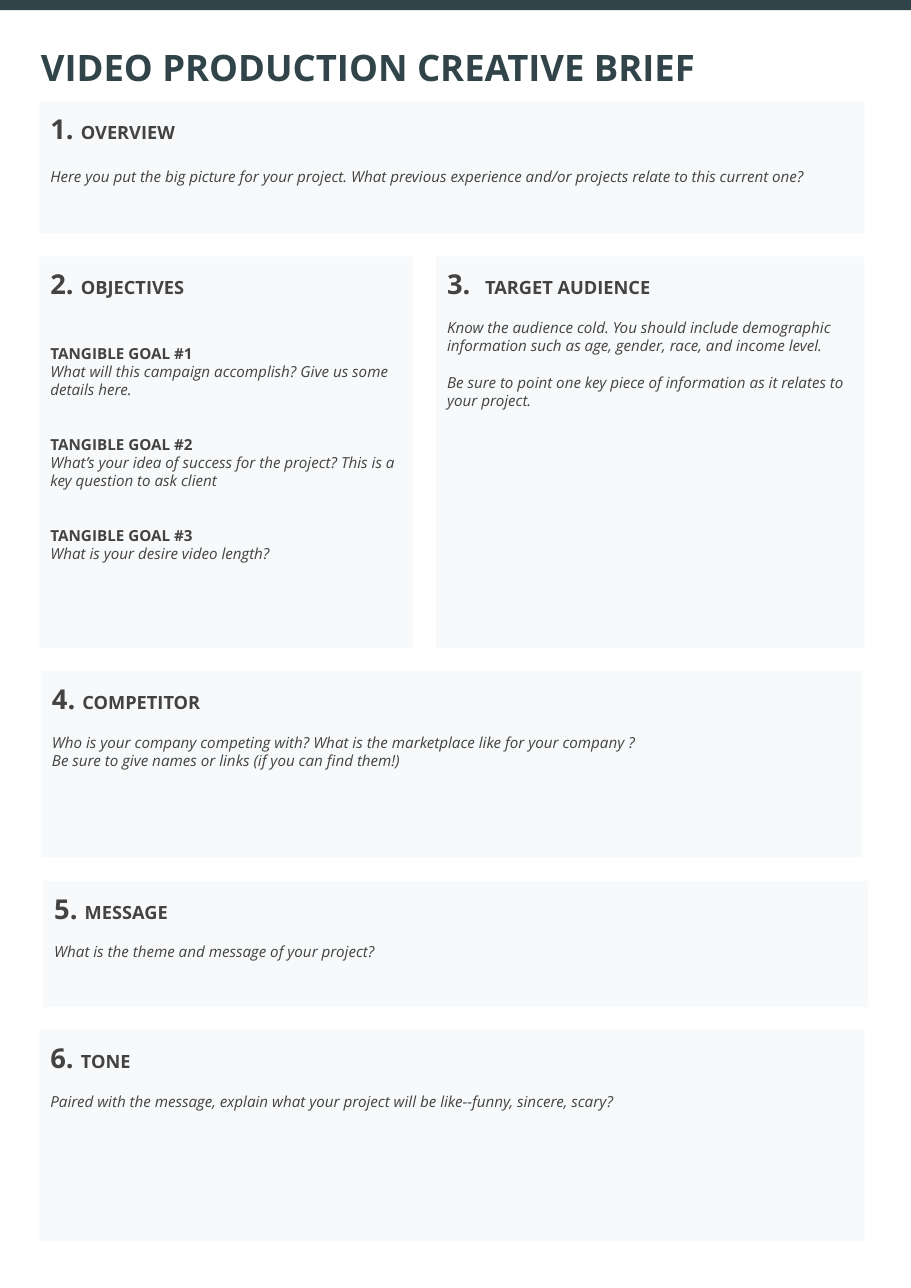
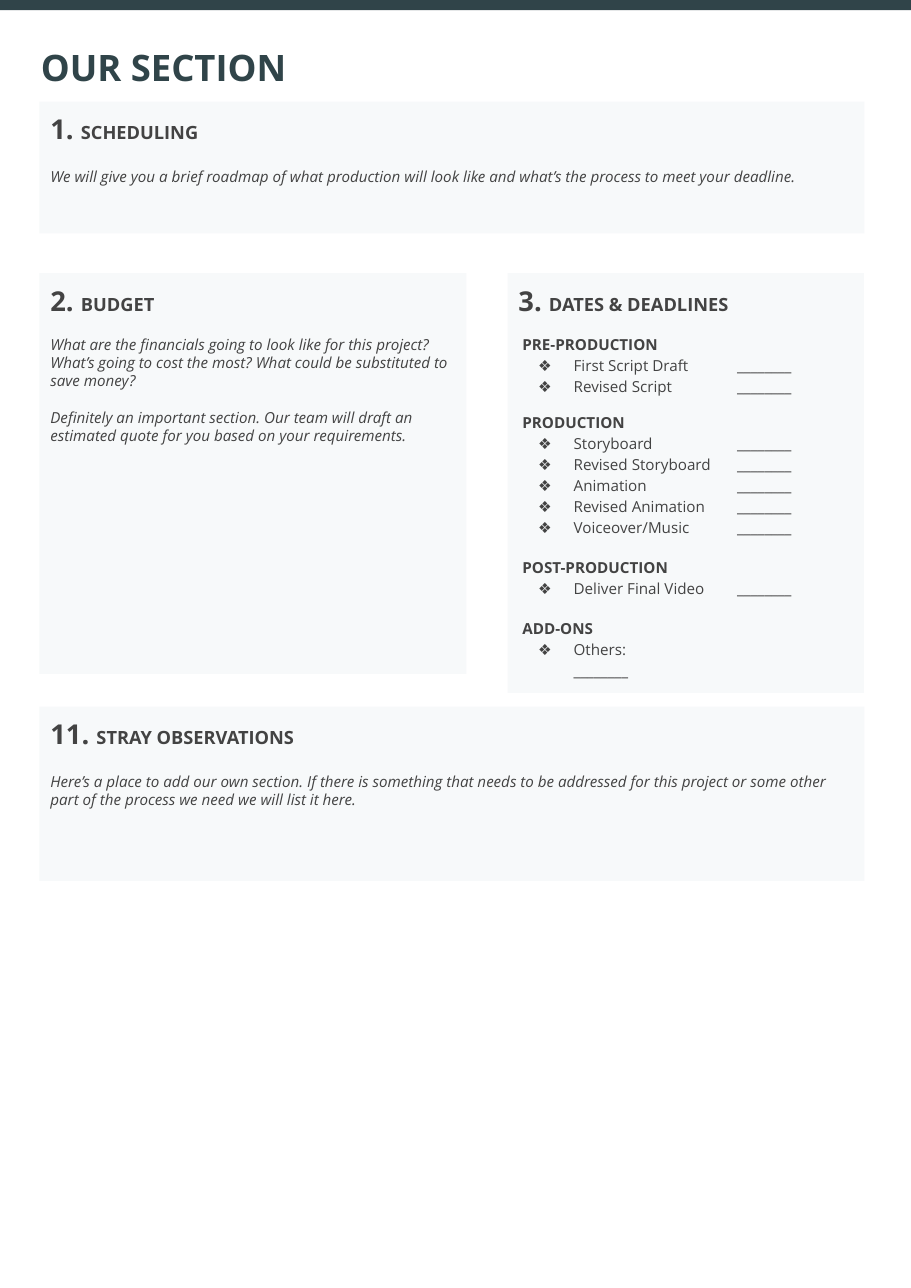
from lxml.etree import SubElement
from pptx import Presentation
from pptx.dml.color import RGBColor
from pptx.enum.shapes import MSO_SHAPE
from pptx.enum.text import MSO_ANCHOR as Anchor, PP_ALIGN as Align
from pptx.oxml.ns import qn
from pptx.util import Pt

COLORS = {"dark": "304449", "panel": "F7F9FA", "text": "434343"}
FONT = "Open Sans"
PAGE_W, PAGE_H = 1200, 1697
INSET = 14.4
LEFT, FULL_W = 52, 1086.5
LINE = 24        # height of one body line
WIDE_LINE = 28.8  # height of one heading line
BLANK = "________"


def write(paragraph, text, size=20, color="text", bold=False, italic=False):
    """Add formatted text; a newline becomes a line break."""
    for index, line in enumerate(text.split("\n")):
        if index:
            paragraph.add_line_break()
        run = paragraph.add_run()
        run.text = line
        font = run.font
        font.name, font.size = FONT, Pt(size)
        font.bold, font.italic = bold, italic
        font.color.rgb = RGBColor.from_string(COLORS[color])


class Brief:
    """Style of the brief and the slide being filled."""

    def __init__(self):
        self.deck = Presentation()
        self.deck.slide_width, self.deck.slide_height = Pt(PAGE_W), Pt(PAGE_H)
        self.slide = None

    def page(self, title):
        self.slide = self.deck.slides.add_slide(self.deck.slide_layouts[6])
        self.block(0, 0, PAGE_W, 13.5, "dark")
        box = self.slide.shapes.add_textbox(Pt(39.5), Pt(44.5), Pt(1110), Pt(78.5))
        write(self.prepare(box), title, size=48, color="dark", bold=True)

    def block(self, left, top, width, height, color):
        shape = self.slide.shapes.add_shape(
            MSO_SHAPE.RECTANGLE, Pt(left), Pt(top), Pt(width), Pt(height))
        shape.shadow.inherit = False
        shape.fill.solid()
        shape.fill.fore_color.rgb = RGBColor.from_string(COLORS[color])
        shape.line.fill.background()
        return shape

    def prepare(self, shape):
        frame = shape.text_frame
        frame.word_wrap = True
        frame.vertical_anchor = Anchor.TOP
        frame.margin_left = frame.margin_right = Pt(INSET)
        frame.margin_top = frame.margin_bottom = Pt(INSET)
        frame.paragraphs[0].alignment = Align.LEFT
        return frame.paragraphs[0]

    def panel(self, number, heading, top, height, left=LEFT, width=FULL_W, tab=None):
        """Draw a numbered panel and return its text frame."""
        shape = self.block(left, top, width, height, "panel")
        title = self.prepare(shape)
        if tab:
            stops = SubElement(title._p.get_or_add_pPr(), qn("a:tabLst"))
            SubElement(stops, qn("a:tab"), pos=str(Pt(tab)), algn="l")
        write(title, f"{number}." + ("\t" if tab else " "), size=36, bold=True)
        write(title, heading, size=24, bold=True)
        return shape.text_frame

    def line(self, frame, text, gap=0, indent=0, **style):
        paragraph = frame.add_paragraph()
        paragraph.alignment = Align.LEFT
        paragraph.space_before = Pt(gap)
        if indent:
            paragraph._p.get_or_add_pPr().set("marL", str(Pt(indent)))
        write(paragraph, text, **style)
        return paragraph

    def hint(self, frame, text, gap=0):
        self.line(frame, text, gap, italic=True)

    def bullet(self, frame, text):
        paragraph = self.line(frame, text, indent=72.7)
        paragraph.line_spacing = 1.15
        props = paragraph._p.get_or_add_pPr()
        props.set("indent", str(Pt(-46.8)))
        color = SubElement(props, qn("a:buClr"))
        SubElement(color, qn("a:srgbClr"), val=COLORS["text"])
        SubElement(props, qn("a:buFont"), typeface=FONT)
        SubElement(props, qn("a:buChar"), char="❖")


def creative_brief(brief):
    brief.page("VIDEO PRODUCTION CREATIVE BRIEF")

    # Overview
    overview = brief.panel(1, "OVERVIEW", 134, 173.5)
    brief.hint(overview, "Here you put the big picture for your project. What previous "
               "experience and/or projects relate to this current one?", WIDE_LINE)

    # Objectives
    objectives = brief.panel(2, "OBJECTIVES", 338, 516, width=492)
    goals = [
        "What will this campaign accomplish? Give us some details here.",
        "What’s your idea of success for the project? This is a key question to ask client",
        "What is your desire video length?",
    ]
    for number, goal in enumerate(goals, 1):
        gap = 2 * (WIDE_LINE if number == 1 else LINE)
        brief.line(objectives, f"TANGIBLE GOAL #{number}", gap, bold=True)
        brief.hint(objectives, goal)

    # Target audience
    audience = brief.panel(3, "TARGET AUDIENCE", 338, 516, 574.5, 564, tab=50)
    for advice in (
        "Know the audience cold. You should include demographic information such as "
        "age, gender, race, and income level.",
        "Be sure to point one key piece of information as it relates to your project.",
    ):
        brief.hint(audience, advice, LINE)

    # Competitor, message and tone
    competitor = brief.panel(4, "COMPETITOR", 884, 245.5, 54, 1081.5)
    brief.hint(competitor, "Who is your company competing with? What is the marketplace "
               "like for your company ?", LINE)
    brief.hint(competitor, "Be sure to give names or links (if you can find them!)")
    message = brief.panel(5, "MESSAGE", 1160.5, 166.5, 57)
    brief.hint(message, "What is the theme and message of your project?", LINE)
    tone = brief.panel(6, "TONE", 1357, 278)
    brief.hint(tone, "Paired with the message, explain what your project will be "
               "like--funny, sincere, scary?", LINE)


def team_section(brief):
    brief.page("OUR SECTION")

    # Scheduling
    scheduling = brief.panel(1, "SCHEDULING", 134, 173.5)
    brief.hint(scheduling, "We will give you a brief roadmap of what production will look "
               "like and what’s the process to meet your deadline.", WIDE_LINE)

    # Budget
    budget = brief.panel(2, "BUDGET", 360, 528, width=562.5)
    for advice in (
        "What are the financials going to look like for this project? What’s going to "
        "cost the most? What could be substituted to save money?",
        "Definitely an important section. Our team will draft an estimated quote for "
        "you based on your requirements.",
    ):
        brief.hint(budget, advice, LINE)

    # Dates and deadlines: each step has the tabs that lead to its blank
    dates = brief.panel(3, "DATES & DEADLINES", 360, 553, 668.5, 469.5)
    phases = [
        ("PRE-PRODUCTION", LINE, [("First Script Draft", 2), ("Revised Script", 3)]),
        ("PRODUCTION", LINE, [("Storyboard", 4), ("Revised Storyboard", 1),
                              ("Animation", 4), ("Revised Animation", 2),
                              ("Voiceover/Music", 2)]),
        ("POST-PRODUCTION", WIDE_LINE, [("Deliver Final Video", 2)]),
        ("ADD-ONS", WIDE_LINE, [("Others:\n", 0)]),
    ]
    for phase, gap, steps in phases:
        brief.line(dates, phase, gap, indent=5.2, bold=True)
        for step, tabs in steps:
            brief.bullet(dates, step + "\t" * tabs + BLANK)

    # Stray observations
    observations = brief.panel(11, "STRAY OBSERVATIONS", 931, 229.5)
    brief.hint(observations, "Here’s a place to add our own section. If there is something "
               "that needs to be addressed for this project or some other part of the "
               "process we need we will list it here.", WIDE_LINE)


def main():
    brief = Brief()
    creative_brief(brief)
    team_section(brief)
    brief.deck.save("out.pptx")


if __name__ == "__main__":
    main()
